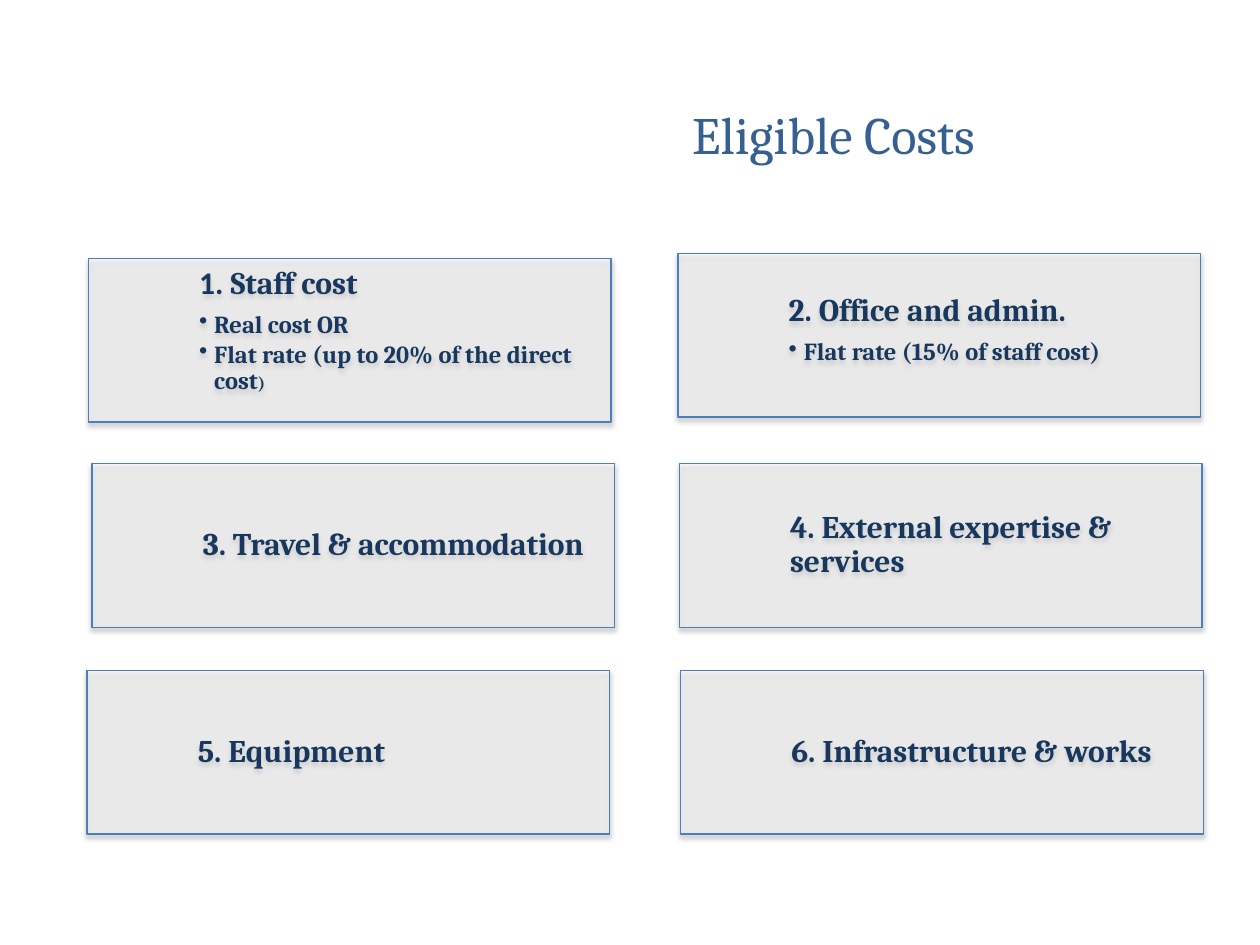
import dataclasses
import typing

import lxml.etree
import pptx
import pptx.dml.color
import pptx.enum.shapes
import pptx.enum.text
import pptx.oxml.ns
import pptx.util

Inches = pptx.util.Inches
Pt = pptx.util.Pt
Anchor = pptx.enum.text.MSO_ANCHOR

COLORS = {"title": "376092", "text": "17375E", "line": "4B7EBC",
          "fill": "FFFFFF", "shade": "000000"}
TITLE = {"size": Pt(30), "name": "Cambria"}
HEAD = {"size": Pt(18), "name": "Cambria", "bold": True}
NUMBER = HEAD | {"name": "Calibri"}
ITEM = HEAD | {"size": Pt(14)}
SMALL = HEAD | {"size": Pt(10)}
CARD_W, CARD_H = 4.15, 1.3
PAD = 0.07
INDENT = Inches(0.12)

Run = tuple[str, dict[str, typing.Any]]


@dataclasses.dataclass
class Card:
    left: float
    top: float
    head: list[Run]
    items: list[list[Run]] = dataclasses.field(default_factory=list)
    inset: float = PAD


CARDS = [
    Card(0.7, 2.05, [("1. ", NUMBER), ("Staff cost", HEAD)],
         [[("Real cost OR", ITEM)],
          [("Flat rate (up to 20% of the direct cost", ITEM), (")", SMALL)]]),
    Card(5.38, 2.01, [("2. Office and admin.", HEAD)],
         [[("Flat rate (15% of staff cost)", ITEM)]], 0.33),
    Card(0.73, 3.68, [("3. Travel & accommodation", HEAD)]),
    Card(5.39, 3.68, [("4. External expertise & services", HEAD)]),
    Card(0.69, 5.32, [("5. Equipment", HEAD)]),
    Card(5.4, 5.32, [("6. Infrastructure & works", HEAD)]),
]


def rgb(key: str) -> pptx.dml.color.RGBColor:
    return pptx.dml.color.RGBColor.from_string(COLORS[key])


def add_node(parent, tag: str, **attrs: str):
    return lxml.etree.SubElement(parent, pptx.oxml.ns.qn(tag), attrs)


def set_all(target, values: dict[str, typing.Any]) -> None:
    for name, value in values.items():
        setattr(target, name, value)


def add_runs(para, runs: list[Run], color: str) -> None:
    for text, style in runs:
        run = para.add_run()
        run.text = text
        set_all(run.font, style)
        run.font.color.rgb = rgb(color)


def add_shade(shape) -> None:
    """Give the shape a soft shadow straight below it."""
    shape.shadow.inherit = False
    effects = shape._element.spPr.find(pptx.oxml.ns.qn("a:effectLst"))
    shade = add_node(effects, "a:outerShdw", blurRad=str(Pt(3.1)),
                     dist=str(Pt(1.8)), dir="5400000", rotWithShape="0")
    color = add_node(shade, "a:srgbClr", val=COLORS["shade"])
    add_node(color, "a:alpha", val="35000")


def add_bullet(para) -> None:
    props = para._p.get_or_add_pPr()
    props.set("marL", str(INDENT))
    props.set("indent", str(-INDENT))
    add_node(props, "a:buChar", char="•")
    para.level = 1


def add_card(slide, card: Card) -> None:
    shape = slide.shapes.add_shape(
        pptx.enum.shapes.MSO_SHAPE.RECTANGLE, Inches(card.left),
        Inches(card.top), Inches(CARD_W), Inches(CARD_H))
    shape.fill.solid()
    shape.fill.fore_color.rgb = rgb("fill")
    color = shape._element.spPr.find(".//" + pptx.oxml.ns.qn("a:srgbClr"))
    add_node(color, "a:alpha", val="40000")
    shape.line.color.rgb = rgb("line")
    shape.line.width = Pt(0.75)
    add_shade(shape)

    frame = shape.text_frame
    set_all(frame, {
        "word_wrap": True,
        "vertical_anchor": Anchor.TOP if card.items else Anchor.MIDDLE,
        "margin_left": Inches(0.88), "margin_top": Inches(card.inset),
        "margin_right": Inches(PAD), "margin_bottom": Inches(PAD)})
    for index, runs in enumerate([card.head, *card.items]):
        para = frame.add_paragraph() if index else frame.paragraphs[0]
        set_all(para, {"alignment": pptx.enum.text.PP_ALIGN.LEFT,
                       "line_spacing": 0.9,
                       "space_after": Pt(2.1 if index else 6.3)})
        if index:
            add_bullet(para)
        add_runs(para, runs, "text")


def add_title(slide, text: str) -> None:
    box = slide.shapes.add_textbox(
        Inches(3.74), Inches(0.76), Inches(5.75), Inches(0.79))
    box.text_frame.word_wrap = True
    para = box.text_frame.paragraphs[0]
    para.alignment = pptx.enum.text.PP_ALIGN.CENTER
    add_runs(para, [(text, TITLE)], "title")


def main() -> None:
    deck = pptx.Presentation()
    set_all(deck, {"slide_width": Inches(10), "slide_height": Inches(7.5)})
    slide = deck.slides.add_slide(deck.slide_layouts[6])
    add_title(slide, "Eligible Costs")
    for card in CARDS:
        add_card(slide, card)
    deck.save("out.pptx")


if __name__ == "__main__":
    main()
